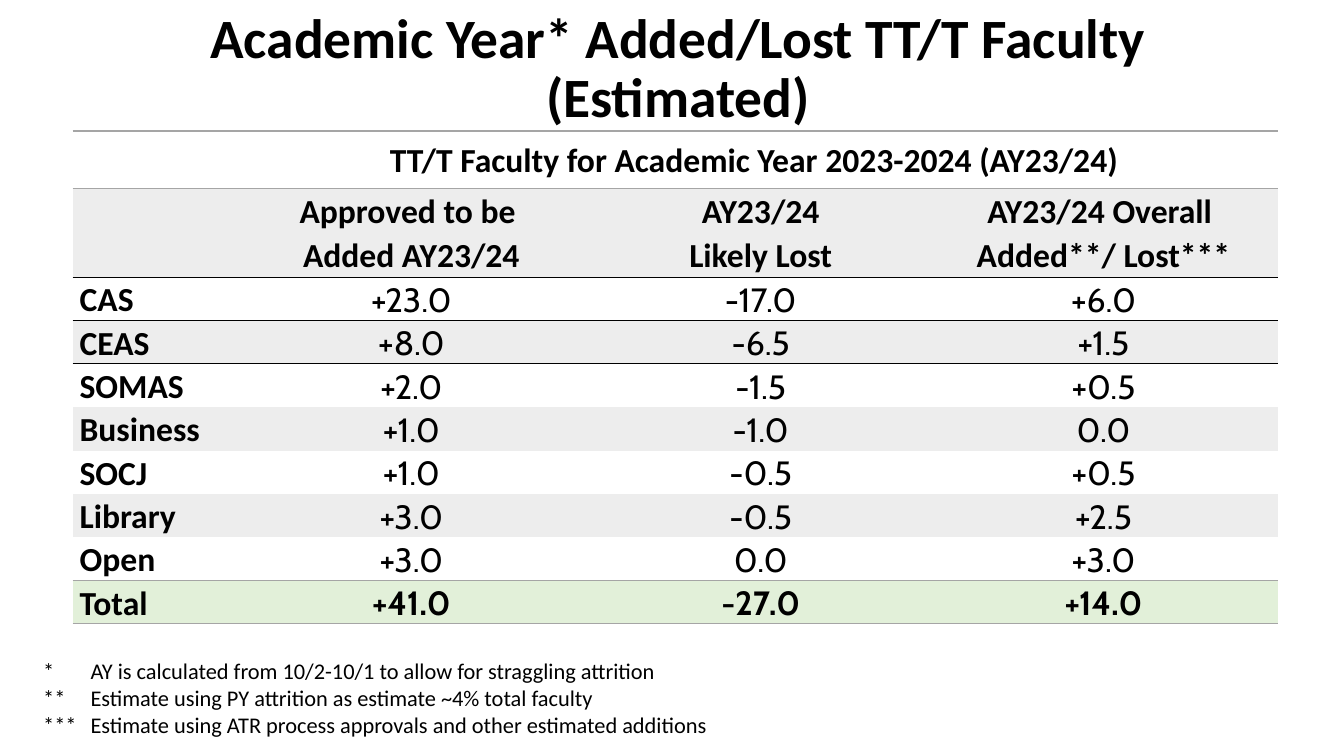
from lxml import etree
from pptx import Presentation
from pptx.dml.color import RGBColor
from pptx.enum.text import MSO_ANCHOR, PP_ALIGN
from pptx.oxml.ns import qn
from pptx.util import Inches, Pt

CENTER, LEFT = PP_ALIGN.CENTER, PP_ALIGN.LEFT
MIDDLE, TOP = MSO_ANCHOR.MIDDLE, MSO_ANCHOR.TOP

COLORS = {"text": "000000", "rule": "A5A5A5", "band": "EDEDED", "total": "E2F0D9"}
HEADING_FONT, NUMBER_FONT = "Calibri", "Cabin"
PLAIN_TABLE_STYLE = "{2D5ABB26-0587-4C30-8999-92F81FD0307C}"

TITLE = "Academic Year* Added/Lost TT/T Faculty (Estimated)"
TABLE_HEADING = "TT/T Faculty for Academic Year 2023-2024 (AY23/24)"
COLUMN_HEADINGS = [
    [],
    ["Approved to be ", "Added AY23/24"],
    ["AY23/24", "Likely Lost"],
    ["AY23/24 Overall ", "Added**/ Lost***"],
]
FACULTY = [
    ("CAS", "+23.0", "-17.0", "+6.0"),
    ("CEAS", "+8.0", "-6.5", "+1.5"),
    ("SOMAS", "+2.0", "-1.5", "+0.5"),
    ("Business", "+1.0", "-1.0", "0.0"),
    ("SOCJ", "+1.0", "-0.5", "+0.5"),
    ("Library", "+3.0", "-0.5", "+2.5"),
    ("Open", "+3.0", "0.0", "+3.0"),
    ("Total", "+41.0", "-27.0", "+14.0"),
]
FOOTNOTES = [
    ("*", "AY is calculated from 10/2-10/1 to allow for straggling attrition"),
    ("**", "Estimate using PY attrition as estimate ~4% total faculty"),
    ("***", "Estimate using ATR process approvals and other estimated additions"),
]

COLUMN_WIDTHS = [1.56, 3.6, 3.33, 3.47]
ROW_HEIGHTS = [0.57, 0.88] + [0.43] * len(FACULTY)
HEADING_ROW, COLUMN_ROW, FIRST_ROW = 0, 1, 2
TOTAL_ROW = len(ROW_HEIGHTS) - 1
# Colour of the line at the top of a row; the last entry closes the table
RULES = {
    HEADING_ROW: "rule",
    COLUMN_ROW: "rule",
    FIRST_ROW: "text",
    FIRST_ROW + 1: "text",
    TOTAL_ROW: "rule",
    TOTAL_ROW + 1: "rule",
}


def write_lines(frame, lines, size, font=HEADING_FONT, bold=False,
                alignment=LEFT, spacing=1.0):
    for index, line in enumerate(lines):
        paragraph = frame.paragraphs[0] if index == 0 else frame.add_paragraph()
        paragraph.alignment = alignment
        paragraph.line_spacing = spacing
        run = paragraph.add_run()
        run.text = line
        run.font.size = Pt(size)
        run.font.name = font
        run.font.bold = bold
        run.font.color.rgb = RGBColor.from_string(COLORS["text"])


def add_text_box(slide, left, top, width, height):
    box = slide.shapes.add_textbox(*map(Inches, (left, top, width, height)))
    box.text_frame.word_wrap = True
    return box.text_frame


def add_border(cell, side, color):
    line = etree.SubElement(cell._tc.get_or_add_tcPr(), qn(side), w=str(Pt(1)))
    fill = etree.SubElement(line, qn("a:solidFill"))
    etree.SubElement(fill, qn("a:srgbClr"), val=color)


def style_cell(cell, row):
    cell.margin_left = cell.margin_right = Inches(0.07)
    cell.margin_top = cell.margin_bottom = 0
    cell.vertical_anchor = MIDDLE if row == HEADING_ROW else TOP
    for side, edge in (("a:lnT", row), ("a:lnB", row + 1)):
        if edge in RULES:
            add_border(cell, side, COLORS[RULES[edge]])
    if row == TOTAL_ROW or row % 2:
        cell.fill.solid()
        name = "total" if row == TOTAL_ROW else "band"
        cell.fill.fore_color.rgb = RGBColor.from_string(COLORS[name])
    else:
        cell.fill.background()


def add_faculty_table(slide):
    frame = slide.shapes.add_table(
        len(ROW_HEIGHTS), len(COLUMN_WIDTHS), Inches(0.72), Inches(1.3),
        Inches(sum(COLUMN_WIDTHS)), Inches(sum(ROW_HEIGHTS)))
    table = frame.table
    table.first_row = table.horz_banding = False
    table._tbl.tblPr.find(qn("a:tableStyleId")).text = PLAIN_TABLE_STYLE
    for column, width in zip(table.columns, COLUMN_WIDTHS):
        column.width = Inches(width)
    for row, height in zip(table.rows, ROW_HEIGHTS):
        row.height = Inches(height)
    table.cell(HEADING_ROW, 1).merge(table.cell(HEADING_ROW, 3))

    contents = [[[], [TABLE_HEADING], [], []], COLUMN_HEADINGS]
    contents += [[[text] for text in record] for record in FACULTY]
    for row, record in enumerate(contents):
        for column, lines in enumerate(record):
            cell = table.cell(row, column)
            style_cell(cell, row)
            is_number = row >= FIRST_ROW and column > 0
            write_lines(
                cell.text_frame, lines, 24,
                font=NUMBER_FONT if is_number else HEADING_FONT,
                bold=not is_number or row == TOTAL_ROW,
                alignment=CENTER if column else LEFT, spacing=1.07)


def add_footnotes(slide):
    """Marks hang to the left of the notes, which start after a tab."""
    frame = add_text_box(slide, 0.33, 6.47, 7.28, 0.91)
    write_lines(frame, [f"{mark}\t{note}" for mark, note in FOOTNOTES], 16)
    for paragraph in frame.paragraphs:
        properties = paragraph._p.get_or_add_pPr()
        properties.set("marL", str(Inches(0.47)))
        properties.set("indent", str(-Inches(0.47)))


def main():
    presentation = Presentation()
    presentation.slide_width = Inches(13.33)
    presentation.slide_height = Inches(7.5)
    slide = presentation.slides.add_slide(presentation.slide_layouts[6])

    title = add_text_box(slide, 0.63, 0.38, 12.19, 0.63)
    title.vertical_anchor = MIDDLE
    write_lines(title, [TITLE], 39.6, bold=True, alignment=CENTER, spacing=0.9)
    add_faculty_table(slide)
    add_footnotes(slide)
    presentation.save("out.pptx")


if __name__ == "__main__":
    main()
